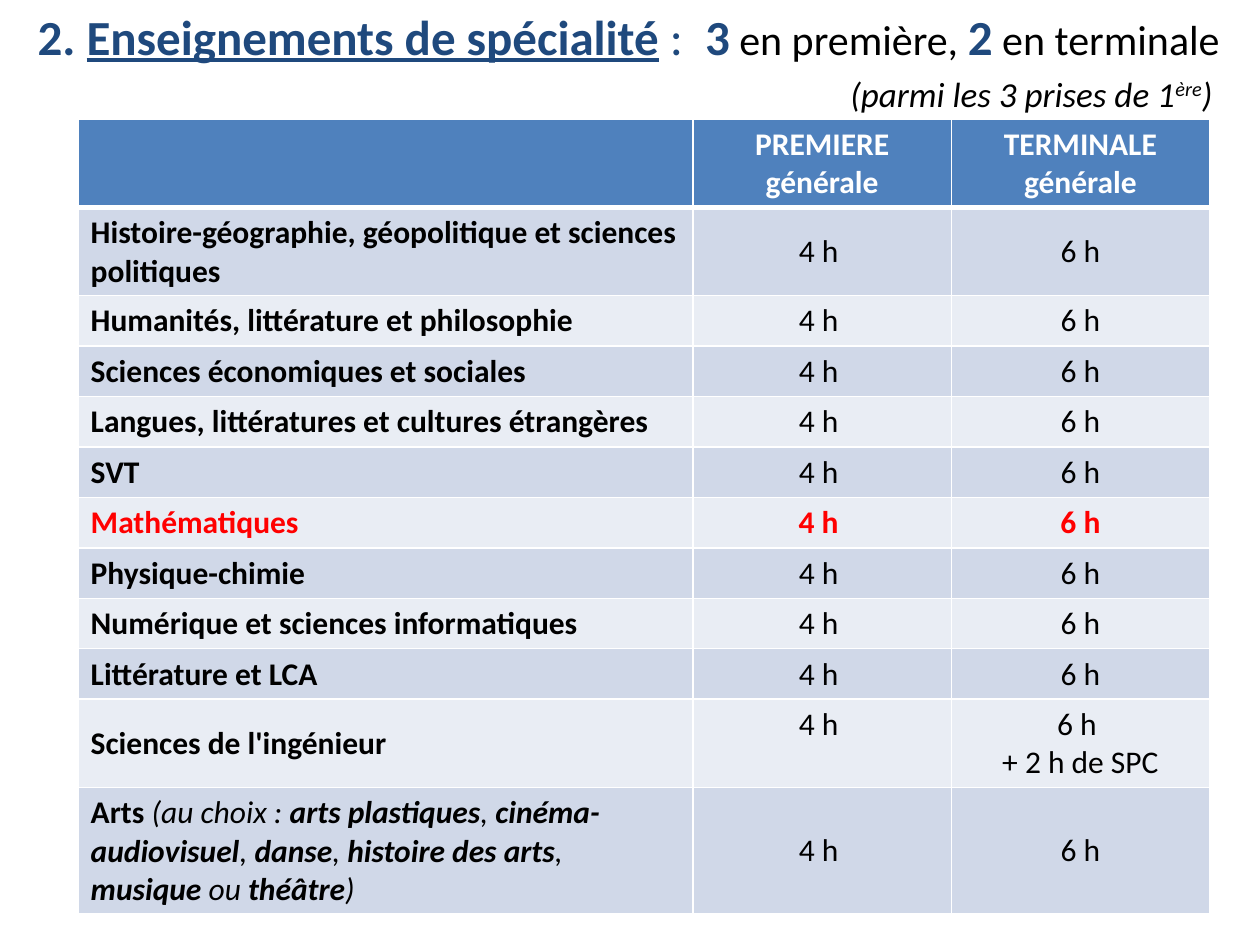
"""Build the slide listing weekly hours of the speciality courses."""
from dataclasses import dataclass, field

from lxml.etree import SubElement
from pptx import Presentation
from pptx.dml.color import RGBColor
from pptx.enum.text import MSO_ANCHOR as Anchor, PP_ALIGN as Align
from pptx.oxml.ns import qn
from pptx.util import Inches, Pt

WIDTH, HEIGHT = Inches(10), Inches(7.5)
COLORS = {"navy": "1F497D", "black": "000000", "white": "FFFFFF", "red": "FF0000",
          "header": "4F81BD", "odd": "D0D8E8", "even": "E9EDF4"}
COLUMN_SHARES = (0.488, 0.205, 0.205)
LINE_UNIT, ROW_PADDING = Inches(0.3), Inches(0.1)


@dataclass
class Span:
    text: str
    size: float = 18
    color: str = "black"
    font: dict = field(default_factory=dict)
    baseline: int = 0


@dataclass
class Course:
    name: list[Span]
    lines: int = 1
    first_year: str = "4 h "
    final_year: tuple[str, ...] = ("6 h",)
    color: str = "black"
    first_anchor: Anchor = Anchor.MIDDLE


BOLD, ITALIC = {"bold": True}, {"italic": True}
BOLD_ITALIC = BOLD | ITALIC


def plain(name: str, **options) -> Course:
    return Course([Span(name, color=options.get("color", "black"), font=BOLD)], **options)


TITLE = [Span("2. ", 28, "navy", BOLD),
         Span("Enseignements de spécialité", 28, "navy", BOLD | {"underline": True}),
         Span(" ", 28, "navy", BOLD), Span(":  ", 28, "navy"),
         Span("3", 28, "navy", BOLD), Span(" en première, ", 24),
         Span("2", 28, "navy", BOLD), Span(" en terminale", 24)]
SUBTITLE = [Span("(parmi les 3 prises de 1", 20, font=ITALIC),
            Span("ère", 20, font=ITALIC, baseline=30000),
            Span(")", 20, font=ITALIC), Span(" ", 24, font=ITALIC)]
ARTS = [Span("Arts ", font=BOLD)] + [
    Span(text, font=style) for text, style in (
        ("(au choix : ", ITALIC), ("arts plastiques", BOLD_ITALIC), (", ", ITALIC),
        ("cinéma-audiovisuel", BOLD_ITALIC), (", ", ITALIC), ("danse", BOLD_ITALIC),
        (", ", ITALIC), ("histoire des arts", BOLD_ITALIC), (",", ITALIC),
        (" musique ", BOLD_ITALIC), ("ou", ITALIC), (" théâtre", BOLD_ITALIC), (")", ITALIC))]
HEADINGS = ("", "PREMIERE générale", "TERMINALE générale")
COURSES = [
    plain("Histoire-géographie, géopolitique et sciences politiques", lines=2),
    plain("Humanités, littérature et philosophie"),
    plain("Sciences économiques et sociales"),
    plain("Langues, littératures et cultures étrangères"),
    plain("SVT"),
    plain("Mathématiques", color="red"),
    plain("Physique-chimie"),
    plain("Numérique et sciences informatiques"),
    plain("Littérature et LCA"),
    plain("Sciences de l'ingénieur", lines=2, final_year=("6 h ", "+ 2 h de SPC"),
          first_anchor=Anchor.TOP),
    Course(ARTS, lines=3),
]


def rgb(name: str) -> RGBColor:
    return RGBColor.from_string(COLORS[name])


def write(paragraph, spans: list[Span], align: Align = Align.LEFT) -> None:
    paragraph.alignment = align
    for span in spans:
        run = paragraph.add_run()
        run.text = span.text
        formats = {"name": "Calibri", "size": Pt(span.size), "bold": False} | span.font
        for attribute, value in formats.items():
            setattr(run.font, attribute, value)
        run.font.color.rgb = rgb(span.color)
        if span.baseline:
            run.font._element.set("baseline", str(span.baseline))


def draw_borders(cell, top: float, bottom: float) -> None:
    properties = cell._tc.get_or_add_tcPr()
    for side, points in {"L": 1, "R": 1, "T": top, "B": bottom}.items():
        line = SubElement(properties, qn(f"a:ln{side}"), w=str(Pt(points)))
        SubElement(SubElement(line, qn("a:solidFill")), qn("a:srgbClr"), val=COLORS["white"])


def fill_cell(cell, paragraphs: list[list[Span]], fill: str, align: Align = Align.CENTER,
              anchor: Anchor = Anchor.MIDDLE, top: float = 1, bottom: float = 1) -> None:
    draw_borders(cell, top, bottom)
    cell.fill.solid()
    cell.fill.fore_color.rgb = rgb(fill)
    cell.vertical_anchor = anchor
    frame = cell.text_frame
    for index, spans in enumerate(paragraphs):
        write(frame.add_paragraph() if index else frame.paragraphs[0], spans, align)


def draw_title(slide) -> None:
    frame = slide.shapes.add_textbox(
        int(WIDTH * 0.02), 0, int(WIDTH * 0.961), int(HEIGHT * 0.13)).text_frame
    frame.word_wrap = True
    write(frame.paragraphs[0], TITLE)
    subtitle = frame.add_paragraph()
    write(subtitle, SUBTITLE)
    subtitle._p.get_or_add_pPr().set("marL", str(int(WIDTH * 0.645)))


def draw_hours(slide) -> None:
    row_lines = [2] + [course.lines for course in COURSES]
    heights = [LINE_UNIT * lines + ROW_PADDING for lines in row_lines]
    table = slide.shapes.add_table(
        len(heights), len(COLUMN_SHARES), int(WIDTH * 0.062), int(HEIGHT * 0.126),
        int(WIDTH * sum(COLUMN_SHARES)), sum(heights)).table
    for column, share in zip(table.columns, COLUMN_SHARES):
        column.width = int(WIDTH * share)
    for row, height in zip(table.rows, heights):
        row.height = height
    for column, heading in enumerate(HEADINGS):
        spans = [Span(heading, color="white", font=BOLD)] if heading else []
        fill_cell(table.cell(0, column), [spans], "header", bottom=3)
    for row, course in enumerate(COURSES, 1):
        band = "odd" if row % 2 else "even"
        top = 3 if row == 1 else 1
        weight = BOLD if course.color == "red" else {}
        first, *final = [[Span(text, color=course.color, font=weight)]
                         for text in (course.first_year, *course.final_year)]
        fill_cell(table.cell(row, 0), [course.name], band, Align.LEFT, top=top)
        fill_cell(table.cell(row, 1), [first], band, anchor=course.first_anchor, top=top)
        fill_cell(table.cell(row, 2), final, band, top=top)


def main() -> None:
    deck = Presentation()
    deck.slide_width, deck.slide_height = WIDTH, HEIGHT
    slide = deck.slides.add_slide(deck.slide_layouts[6])
    draw_title(slide)
    draw_hours(slide)
    deck.save("out.pptx")


if __name__ == "__main__":
    main()
